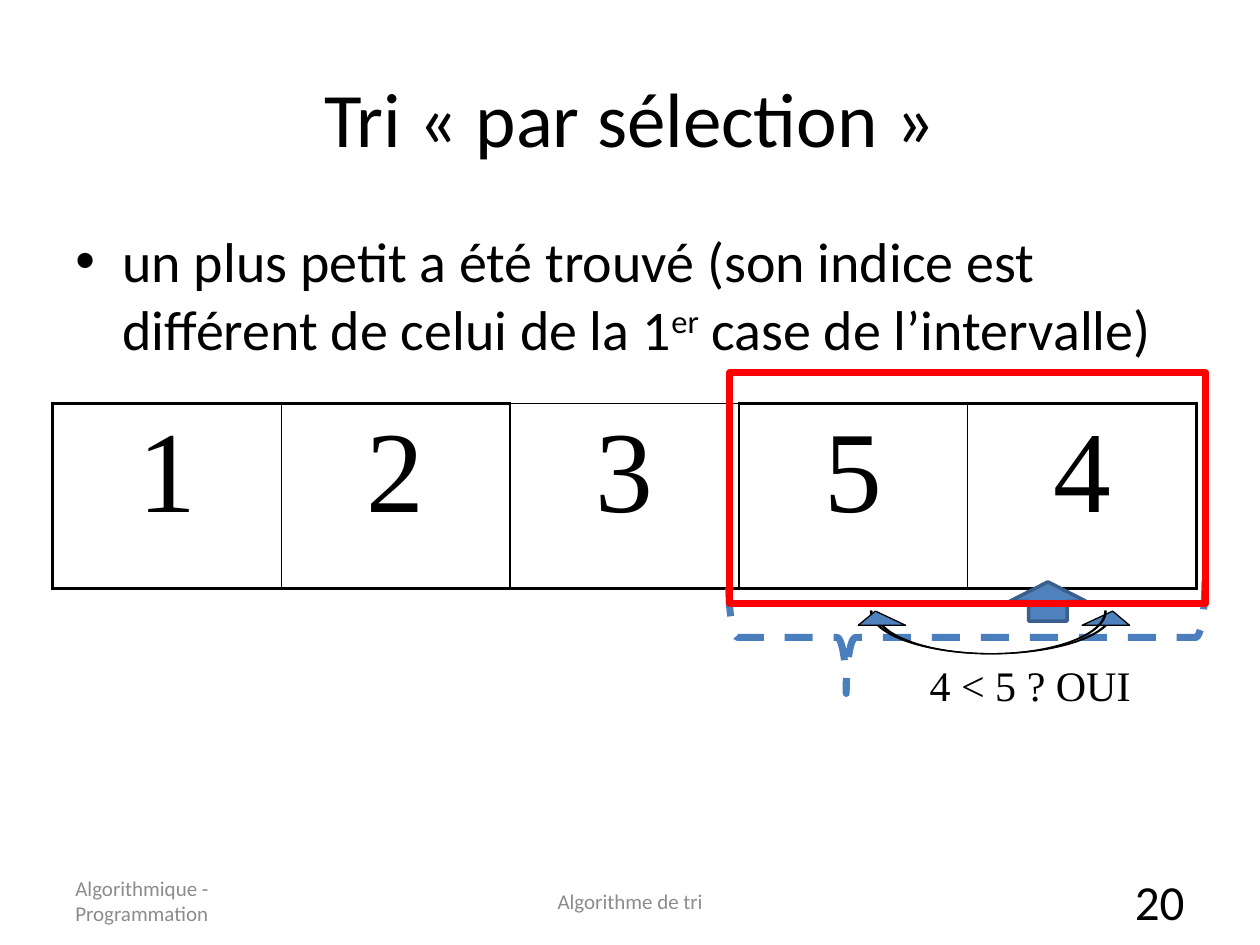
import pptx
import pptx.dml.color
import pptx.enum.dml
import pptx.enum.shapes
import pptx.enum.text
import pptx.oxml.ns
import pptx.util
from lxml import etree
from pptx.util import Cm, Pt

COLORS = {"black": "000000", "grey": "8C8C8C", "blue": "4F81BD",
          "brace": "4B7EBC", "edge": "3A5F8C", "red": "FF0000"}
SHAPES = pptx.enum.shapes.MSO_SHAPE
ALIGN = pptx.enum.text.PP_ALIGN
ANCHOR = pptx.enum.text.MSO_ANCHOR
THIN, THICK = 1, 2.25


def rgb(name):
    return pptx.dml.color.RGBColor.from_string(COLORS[name])


def apply(target, values):
    for name, value in values.items():
        setattr(target, name, value)


def add_child(parent, tag, **attributes):
    child = etree.SubElement(parent, pptx.oxml.ns.qn(tag))
    for name, value in attributes.items():
        child.set(name, str(value))
    return child


def write_spans(para, spans, size, font="Calibri", color="black"):
    """Each span is a pair of text and baseline shift in percent."""
    for text, shift in spans:
        span = para.add_run()
        span.text = text
        apply(span.font, {"size": Pt(size), "name": font})
        span.font.color.rgb = rgb(color)
        if shift:
            span.font._element.set("baseline", str(shift * 1000))


def add_text(page, place, spans, size, frame_format=None, para_format=None, **look):
    box = page.shapes.add_textbox(*map(Cm, place))
    apply(box.text_frame, {"word_wrap": True, **(frame_format or {})})
    para = box.text_frame.paragraphs[0]
    apply(para, para_format or {})
    write_spans(para, spans, size, **look)
    return para


def add_bullet(para, indent):
    properties = para._p.get_or_add_pPr()
    properties.set("marL", str(indent))
    properties.set("indent", str(-indent))
    add_child(properties, "a:buFont", typeface="Arial")
    add_child(properties, "a:buChar", char="•")


def add_figure(page, kind, place, line, width, fill=None, adjust=(), dashed=False, mirrored=False):
    figure = page.shapes.add_shape(kind, *map(Cm, place))
    figure.shadow.inherit = False
    for index, value in enumerate(adjust):
        figure.adjustments[index] = value
    if fill:
        figure.fill.solid()
        figure.fill.fore_color.rgb = rgb(fill)
    else:
        figure.fill.background()
    figure.line.color.rgb = rgb(line)
    figure.line.width = Pt(width)
    if dashed:
        figure.line.dash_style = pptx.enum.dml.MSO_LINE.DASH
    if mirrored:
        figure._element.spPr.xfrm.set("flipH", "1")
    return figure


def add_border(cell, side, width):
    line = add_child(cell._tc.get_or_add_tcPr(), "a:ln" + side, w=Pt(width))
    add_child(add_child(line, "a:solidFill"), "a:srgbClr", val=COLORS["black"])


def add_array(page, place, values):
    table = page.shapes.add_table(1, len(values), *map(Cm, place)).table
    apply(table, {"first_row": False, "horz_banding": False})
    last = len(values) - 1
    for index, value in enumerate(values):
        cell = table.cell(0, index)
        para = cell.text_frame.paragraphs[0]
        apply(para, {"alignment": ALIGN.CENTER, "space_before": Pt(13.2)})
        write_spans(para, [(value, 0)], 66, "Times New Roman")
        # Thick outer edge, except above the middle cell
        widths = {"L": THICK if index == 0 else THIN,
                  "R": THICK if index == last else THIN,
                  "T": THIN if index == last // 2 else THICK,
                  "B": THICK}
        for side, width in widths.items():
            add_border(cell, side, width)
        cell.fill.background()


def main():
    deck = pptx.Presentation()
    apply(deck, {"slide_width": Cm(25.4), "slide_height": Cm(19.05)})
    page = deck.slides.add_slide(deck.slide_layouts[6])
    middle = {"vertical_anchor": ANCHOR.MIDDLE}

    # Title and statement
    add_text(page, (1.27, 0.76, 22.86, 3.18), [("Tri «\u00a0par sélection\u00a0»", 0)], 44,
             middle, {"alignment": ALIGN.CENTER})
    statement = add_text(
        page, (1.27, 4.45, 22.86, 12.57),
        [("un plus petit a été trouvé (son indice est différent de celui de la 1", 0),
         ("er", 30), (" case de l’intervalle)", 0)],
        32, para_format={"space_before": Pt(6.4)})
    add_bullet(statement, Cm(0.95))

    # Array being sorted, with a brace under the remaining interval
    add_array(page, (1.06, 8.13, 23.06, 3.73), "12354")
    brace = add_figure(page, SHAPES.LEFT_BRACE, (18.36, 8.05, 2.26, 9.6), "brace", 4,
                       adjust=(0.083, 0.247), dashed=True)
    brace.rotation = 270

    # Footer
    footers = [(1.27, 5.93, "Algorithmique - Programmation", 12, "grey", ALIGN.LEFT),
               (8.68, 8.05, "Algorithme de tri", 12, "grey", ALIGN.CENTER),
               (18.2, 5.93, "20", 28, "black", ALIGN.RIGHT)]
    for left, width, text, size, color, alignment in footers:
        add_text(page, (left, 17.65, width, 1.02), [(text, 0)], size,
                 middle, {"alignment": alignment}, color=color)

    # Swap arrows and comparison
    for left, width, mirrored in ((17.55, 5.36, False), (17.17, 5.13, True)):
        add_figure(page, SHAPES.CURVED_UP_ARROW, (left, 12.32, width, 0.86), "black", 0.75,
                   "blue", (0.032, 1.112, 0.333), mirrored=mirrored)
    add_text(page, (18.49, 13.18, 4.6, 1.27), [("4 < 5 ? OUI", 0)], 24,
             {"word_wrap": False, "auto_size": pptx.enum.text.MSO_AUTO_SIZE.SHAPE_TO_FIT_TEXT},
             font="Times New Roman")

    # Marker of the smallest value and frame of the interval
    add_figure(page, SHAPES.UP_ARROW, (20.35, 11.73, 1.55, 0.79), "edge", 2, "blue")
    add_figure(page, SHAPES.RECTANGLE, (14.71, 7.52, 9.6, 4.65), "red", 4)

    deck.save("out.pptx")


if __name__ == "__main__":
    main()
